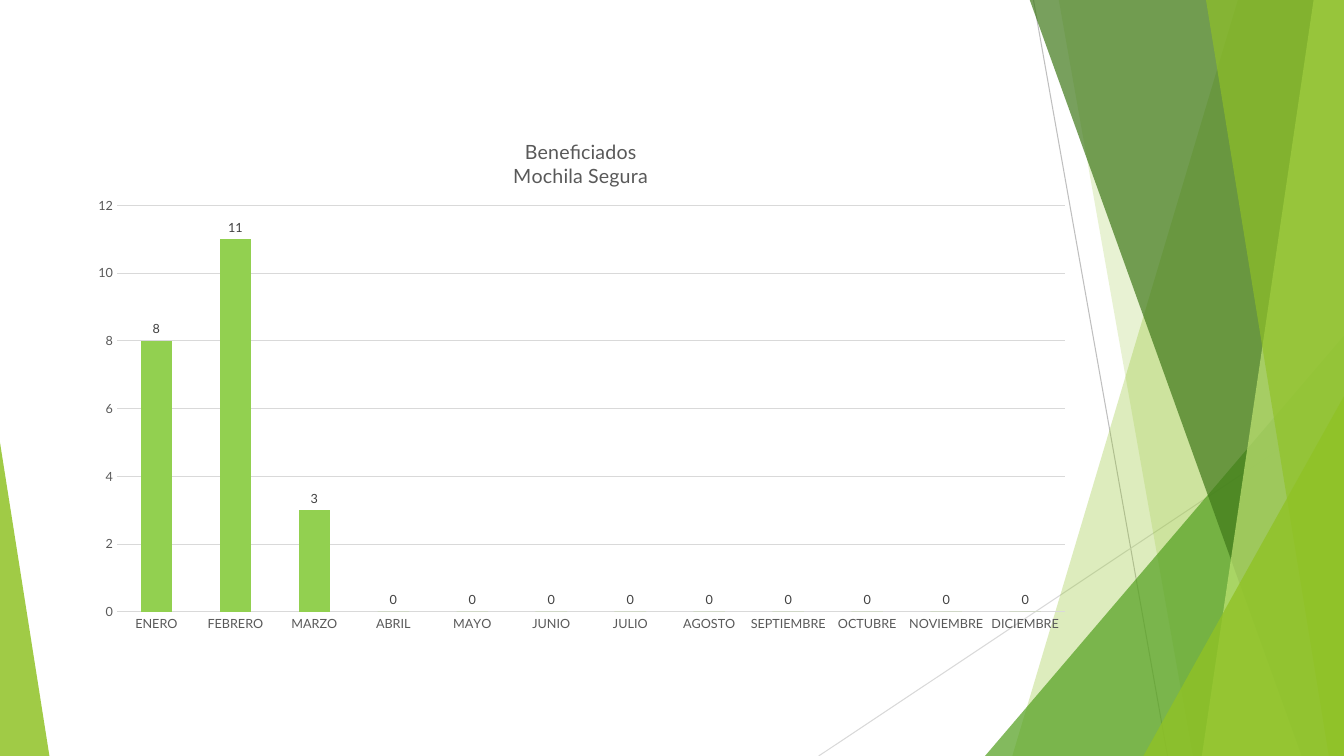
from dataclasses import dataclass

from lxml import etree
from pptx import Presentation
from pptx import util as u
from pptx.chart.chart import Chart
from pptx.chart.data import CategoryChartData
from pptx.dml.color import RGBColor
from pptx.enum import chart as charts, shapes
from pptx.oxml import ns
from pptx.shapes.autoshape import Shape
from pptx.slide import Slide
from pptx.text.text import Font, TextFrame

FONT = "Lato"
LIME = RGBColor(0x90, 0xC2, 0x26)
GREEN = RGBColor(0x54, 0xA0, 0x21)
FOREST = RGBColor(0x3F, 0x78, 0x19)
PALE_LIME = RGBColor(0xC0, 0xE4, 0x74)
BAR_GREEN = RGBColor(0x92, 0xD0, 0x50)
MID_GRAY = RGBColor(0xBF, 0xBF, 0xBF)
LIGHT_GRAY = RGBColor(0xD9, 0xD9, 0xD9)
TEXT_GRAY = RGBColor(0x59, 0x59, 0x59)
LABEL_GRAY = RGBColor(0x40, 0x40, 0x40)
BLACK = RGBColor(0, 0, 0)

WIDTH, HEIGHT, TOP = 13.33, 7.5, -0.01
MONTHS = ["ENERO", "FEBRERO", "MARZO", "ABRIL", "MAYO", "JUNIO", "JULIO", "AGOSTO",
          "SEPTIEMBRE", "OCTUBRE", "NOVIEMBRE", "DICIEMBRE"]
BENEFICIARIES = [8, 11, 3] + [0] * 9


@dataclass(frozen=True)
class Ray:
    start: tuple[float, float]
    end: tuple[float, float]
    color: RGBColor


@dataclass(frozen=True)
class Band:
    top_left: float
    bottom_left: float
    color: RGBColor
    opacity: int


@dataclass(frozen=True)
class Corner:
    left: float
    top: float
    width: float
    apex: float
    color: RGBColor
    opacity: int


RAYS = [
    Ray((10.25, 0), (11.58, HEIGHT), MID_GRAY),
    Ray((WIDTH, 4.03), (8.12, HEIGHT), LIGHT_GRAY),
]
FACETS = [
    Band(12.28, 10.04, LIME, 30),
    Band(10.5, 11.83, LIME, 20),
    Corner(9.77, 3.33, 3.56, 1, GREEN, 72),
    Band(10.21, 12.91, FOREST, 70),
    Band(13.03, 11.92, PALE_LIME, 70),
    Band(11.96, 13.18, LIME, 65),
    Corner(11.34, 3.93, 1.99, 1, LIME, 80),
    Corner(0, 4.39, 0.49, 0, LIME, 85),
]


def paint(shape: Shape, color: RGBColor, opacity: int) -> None:
    shape.shadow.inherit = False
    shape.line.fill.background()
    shape.fill.solid()
    shape.fill.fore_color.rgb = color
    tint = shape.fill._xPr.find(".//" + ns.qn("a:srgbClr"))
    etree.SubElement(tint, ns.qn("a:alpha"), val=str(opacity * 1000))


def add_ray(page: Slide, ray: Ray) -> None:
    points = [u.Inches(value) for value in ray.start + ray.end]
    line = page.shapes.add_connector(shapes.MSO_CONNECTOR.STRAIGHT, *points)
    line.line.color.rgb = ray.color
    line.line.width = u.Pt(0.75)
    etree.SubElement(line._element.spPr, ns.qn("a:effectLst"))


def add_band(page: Slide, band: Band) -> None:
    outline = [(band.top_left, TOP), (WIDTH, TOP), (WIDTH, HEIGHT), (band.bottom_left, HEIGHT)]
    start, *others = [(u.Inches(x), u.Inches(y)) for x, y in outline]
    builder = page.shapes.build_freeform(*start)
    builder.add_line_segments(others, close=True)
    paint(builder.convert_to_shape(), band.color, band.opacity)


def add_corner(page: Slide, corner: Corner) -> None:
    triangle = page.shapes.add_shape(
        shapes.MSO_SHAPE.ISOSCELES_TRIANGLE, u.Inches(corner.left), u.Inches(corner.top),
        u.Inches(corner.width), u.Inches(HEIGHT - corner.top))
    triangle.adjustments[0] = corner.apex
    paint(triangle, corner.color, corner.opacity)


def format_font(font: Font, *, size: float, color: RGBColor) -> None:
    font.name = FONT
    font.size = u.Pt(size)
    font.bold = False
    font.color.rgb = color


def write_lines(frame: TextFrame, text: str, *, size: float, color: RGBColor) -> None:
    for index, line in enumerate(text.split("\n")):
        para = frame.add_paragraph() if index else frame.paragraphs[0]
        span = para.add_run()
        span.text = line
        format_font(span.font, size=size, color=color)


def place(parent: etree._Element, index: int, **position: float) -> None:
    for old in parent.findall(ns.qn("c:layout")):
        parent.remove(old)
    layout = etree.Element(ns.qn("c:layout"))
    manual = etree.SubElement(layout, ns.qn("c:manualLayout"))
    if "w" in position:
        etree.SubElement(manual, ns.qn("c:layoutTarget"), val="inner")
    for side in "xy":
        etree.SubElement(manual, ns.qn(f"c:{side}Mode"), val="edge")
    for key, value in position.items():
        etree.SubElement(manual, ns.qn(f"c:{key}"), val=str(value))
    parent.insert(index, layout)


def format_axes(chart: Chart) -> None:
    for axis in (chart.category_axis, chart.value_axis):
        axis.major_tick_mark = axis.minor_tick_mark = charts.XL_TICK_MARK.NONE
        axis.format.line.fill.background()
        format_font(axis.tick_labels.font, size=9, color=TEXT_GRAY)
    scale = chart.value_axis
    scale.minimum_scale, scale.maximum_scale, scale.major_unit = 0, 12, 2
    scale.has_major_gridlines = True
    scale.major_gridlines.format.line.color.rgb = LIGHT_GRAY
    scale.major_gridlines.format.line.width = u.Pt(0.75)


def add_beneficiary_chart(page: Slide) -> None:
    data = CategoryChartData()
    data.categories = MONTHS
    data.add_series("Series 1", BENEFICIARIES)
    chart = page.shapes.add_chart(
        charts.XL_CHART_TYPE.COLUMN_CLUSTERED, u.Inches(0.76), u.Inches(1.12),
        u.Inches(10), u.Inches(5.24), data).chart
    format_font(chart.font, size=10, color=BLACK)
    chart.has_legend = False
    chart.has_title = True
    write_lines(chart.chart_title.text_frame, "Beneficiados\nMochila Segura",
                size=14, color=TEXT_GRAY)
    format_axes(chart)

    plot = chart.plots[0]
    plot.gap_width = 150
    plot.vary_by_categories = False
    series = plot.series[0]
    series.format.fill.solid()
    series.format.fill.fore_color.rgb = BAR_GREEN
    labels = series.data_labels
    labels.show_value = True
    labels.position = charts.XL_LABEL_POSITION.OUTSIDE_END
    format_font(labels.font, size=9, color=LABEL_GRAY)

    place(chart.chart_title._element, 1, x=0.43, y=0.04)
    area = chart._chartSpace.find(".//" + ns.qn("c:plotArea"))
    place(area, 0, x=0.04, y=0.175, w=0.94, h=0.77)


def main() -> None:
    deck = Presentation()
    deck.slide_width, deck.slide_height = u.Inches(WIDTH), u.Inches(HEIGHT)
    page = deck.slides.add_slide(deck.slide_layouts[6])
    for ray in RAYS:
        add_ray(page, ray)
    for facet in FACETS:
        if isinstance(facet, Band):
            add_band(page, facet)
        else:
            add_corner(page, facet)
    add_beneficiary_chart(page)
    deck.save("out.pptx")


if __name__ == "__main__":
    main()
